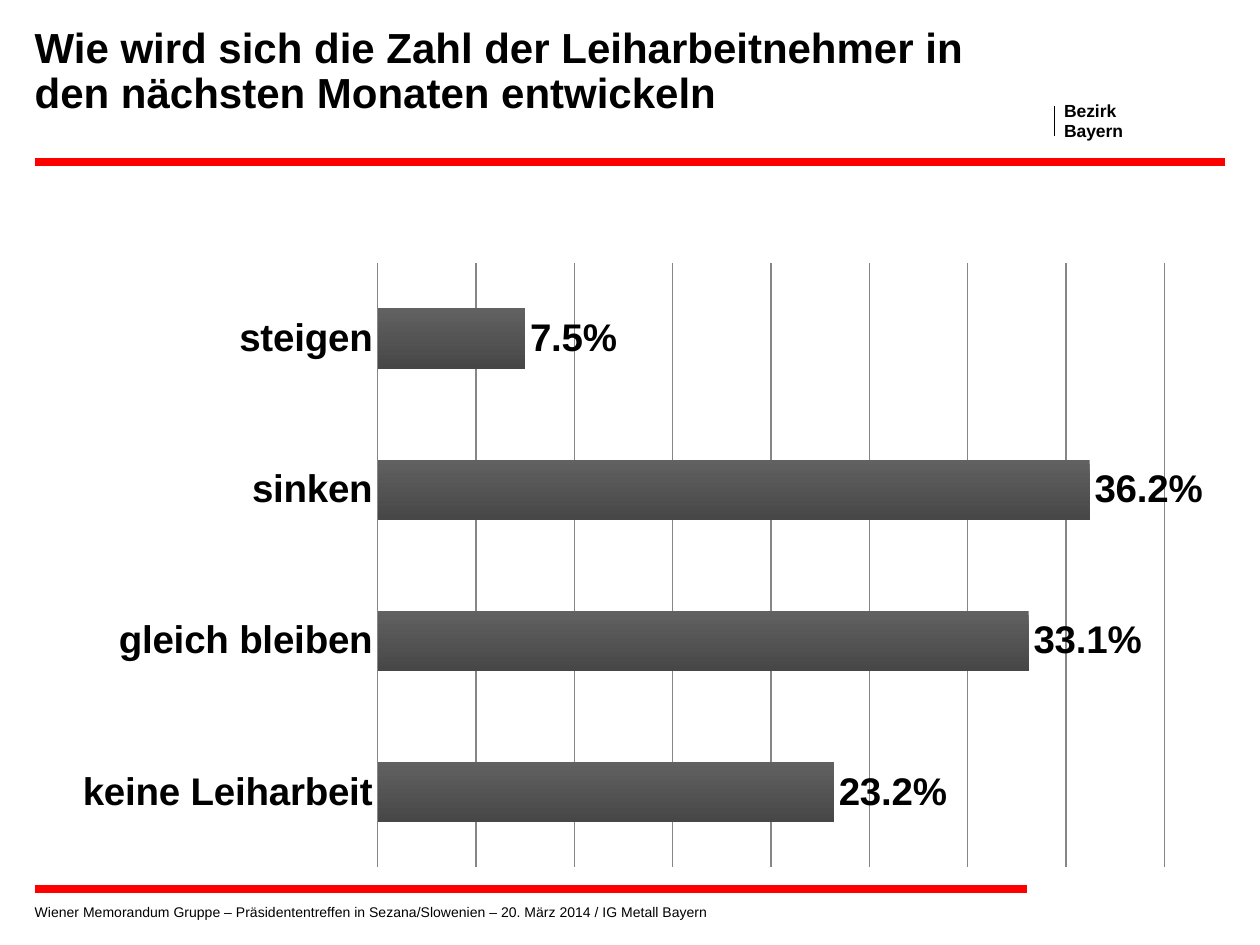
from lxml import etree
from pptx import Presentation
from pptx.chart.data import CategoryChartData
from pptx.dml.color import RGBColor
from pptx.enum import chart as charts, shapes
from pptx.oxml import ns
from pptx.util import Cm, Pt

FONT = "Arial"
COLORS = {"text": "000000", "rule": "FF0000", "grid": "868686",
          "bar_top": "616161", "bar_bottom": "474747"}

# lines of text, (left, top, width, height) in cm, size, bold, line spacing
TEXTS = [
    (["Bezirk", "Bayern"], (21.45, 2.06, 1.5, 0.79), 10, True, 11),
    (["Wiener Memorandum Gruppe – Präsidententreffen in Sezana/Slowenien"
      " – 20. März 2014 / IG Metall Bayern"],
     (0.7, 18.12, 18.01, 0.43), 8, False, 12),
    (["Wie wird sich die Zahl der Leiharbeitnehmer in den nächsten Monaten"
      " entwickeln"], (0.7, 0.53, 19, 1.85), 24, True, 26),
]
# start, end in cm, colour, width in points
RULES = [
    ((0.7, 3.27), (24.7, 3.27), "rule", 4.5),
    ((21.26, 2.13), (21.26, 2.74), "text", 0.8),
    ((0.7, 17.92), (20.7, 17.92), "rule", 4.5),
]
FORECAST = {"steigen": 0.075, "sinken": 0.362,
            "gleich bleiben": 0.331, "keine Leiharbeit": 0.232}
CHART_AREA = (0.7, 3.52, 24, 14.4)
PLOT_AREA = {"x": 0.288, "y": 0.124, "w": 0.661, "h": 0.846}
PERCENT = "0.0%"


def rgb(name):
    return RGBColor.from_string(COLORS[name])


def style_font(font, size, bold):
    font.name, font.size, font.bold = FONT, Pt(size), bold
    font.color.rgb = rgb("text")


def add_text(page, lines, area, size, bold, spacing):
    frame = page.shapes.add_textbox(*map(Cm, area)).text_frame
    frame.word_wrap = True
    frame.margin_left = frame.margin_right = 0
    frame.margin_top = frame.margin_bottom = 0
    para = frame.paragraphs[0]
    para.line_spacing = Pt(spacing)
    for index, line in enumerate(lines):
        if index:
            para.add_line_break()
        span = para.add_run()
        span.text = line
        style_font(span.font, size, bold)


def add_rule(page, start, end, color, width):
    rule = page.shapes.add_connector(
        shapes.MSO_CONNECTOR.STRAIGHT, *map(Cm, start + end))
    rule.line.color.rgb = rgb(color)
    rule.line.width = Pt(width)
    etree.SubElement(rule._element.spPr, ns.qn("a:effectLst"))


def place_plot(chart):
    """Fix the inner plot area as fractions of the chart."""
    plot_area = chart._chartSpace.chart.plotArea
    for old in plot_area.findall(ns.qn("c:layout")):
        plot_area.remove(old)
    layout = etree.Element(ns.qn("c:layout"))
    manual = etree.SubElement(layout, ns.qn("c:manualLayout"))
    settings = {"layoutTarget": "inner", "xMode": "edge", "yMode": "edge",
                **PLOT_AREA}
    for tag, value in settings.items():
        etree.SubElement(manual, ns.qn(f"c:{tag}"), val=str(value))
    plot_area.insert(0, layout)


def add_forecast_chart(page):
    data = CategoryChartData(number_format=PERCENT)
    data.categories = list(FORECAST)
    data.add_series("Series 1", list(FORECAST.values()))
    chart = page.shapes.add_chart(
        charts.XL_CHART_TYPE.BAR_CLUSTERED, *map(Cm, CHART_AREA), data).chart
    chart.has_title = chart.has_legend = False
    style_font(chart.font, 18, False)
    place_plot(chart)

    names = chart.category_axis
    names.reverse_order = True
    names.major_tick_mark = charts.XL_TICK_MARK.NONE
    names.format.line.color.rgb = rgb("grid")
    style_font(names.tick_labels.font, 22, True)

    values = chart.value_axis
    values.minimum_scale, values.maximum_scale = 0, 0.4
    values.major_unit = 0.05
    values.has_major_gridlines = True
    values.major_gridlines.format.line.color.rgb = rgb("grid")
    values.visible = False

    plot = chart.plots[0]
    plot.gap_width = 150
    plot.vary_by_categories = False
    fill = plot.series[0].format.fill
    fill.gradient()
    fill.gradient_angle = 270
    for stop, color in zip(fill.gradient_stops, ("bar_top", "bar_bottom")):
        stop.color.rgb = rgb(color)

    labels = plot.series[0].data_labels
    labels.show_value = True
    labels.position = charts.XL_LABEL_POSITION.OUTSIDE_END
    labels.number_format = PERCENT
    labels.number_format_is_linked = False
    style_font(labels.font, 22, True)


def main():
    deck = Presentation()
    deck.slide_width, deck.slide_height = Cm(25.4), Cm(19.05)
    page = deck.slides.add_slide(deck.slide_layouts[6])
    for rule in RULES:
        add_rule(page, *rule)
    for item in TEXTS:
        add_text(page, *item)
    add_forecast_chart(page)
    deck.save("out.pptx")


if __name__ == "__main__":
    main()
